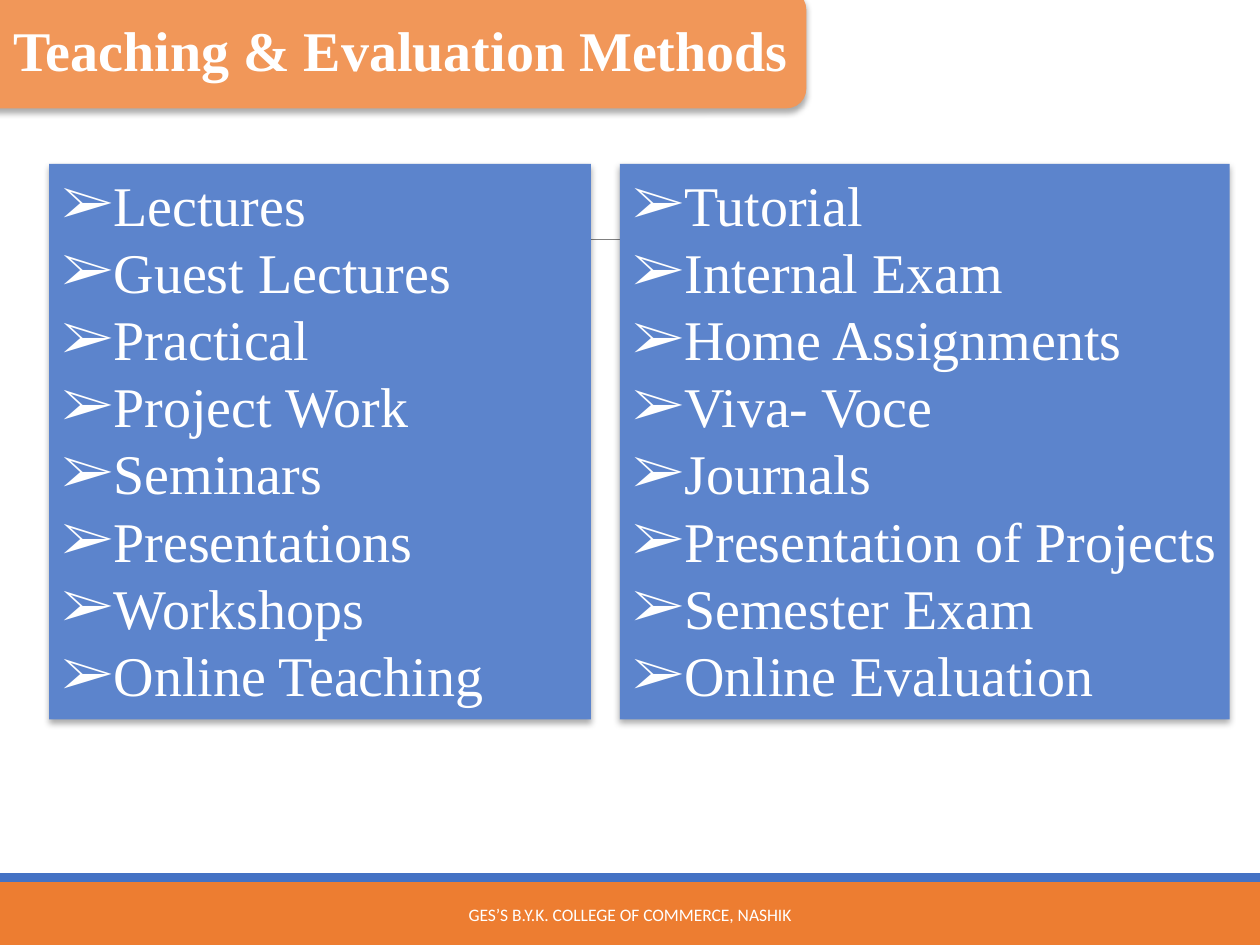
from lxml import etree
from pptx import Presentation
from pptx.dml.color import RGBColor
from pptx.enum import shapes, text
from pptx.oxml import parse_xml
from pptx.oxml.ns import nsdecls, qn
from pptx.util import Inches, Pt

ORANGE = RGBColor(0xED, 0x7D, 0x31)
LIGHT_ORANGE = RGBColor(0xF1, 0x97, 0x59)
BLUE = RGBColor(0x44, 0x72, 0xC4)
LIGHT_BLUE = RGBColor(0x5C, 0x84, 0xCC)
GREY = RGBColor(0x80, 0x80, 0x80)
WHITE = RGBColor(0xFF, 0xFF, 0xFF)

TEACHING = ["Lectures", "Guest Lectures", "Practical", "Project Work",
            "Seminars", "Presentations", "Workshops", "Online Teaching"]
EVALUATION = ["Tutorial", "Internal Exam", "Home Assignments", "Viva- Voce",
              "Journals", "Presentation of Projects", "Semester Exam",
              "Online Evaluation"]


def place(sp, left, top, width, height):
    """Move and size a shape, in inches."""
    sp.left, sp.top = Inches(left), Inches(top)
    sp.width, sp.height = Inches(width), Inches(height)


def send_to_back(s, sp):
    """Put a shape behind all others on the slide."""
    s.shapes._spTree.remove(sp._element)
    s.shapes._spTree.insert(2, sp._element)


def add_shadow(sp):
    """Give a shape a soft shadow straight below it."""
    sp._element.spPr.append(parse_xml(
        f'<a:effectLst {nsdecls("a")}>'
        '<a:outerShdw blurRad="44450" dist="27940" dir="5400000" rotWithShape="0">'
        '<a:srgbClr val="000000"><a:alpha val="32000"/></a:srgbClr>'
        '</a:outerShdw></a:effectLst>'))


def add_block(s, kind, box, color, shadow=False):
    """Add a filled shape without an outline."""
    sp = s.shapes.add_shape(kind, *map(Inches, box))
    sp.fill.solid()
    sp.fill.fore_color.rgb = color
    sp.line.fill.background()
    if shadow:
        add_shadow(sp)
    else:
        sp.shadow.inherit = False
    return sp


def add_rule(s, left, right, y):
    """Add a thin grey rule behind the panels."""
    line = s.shapes.add_connector(shapes.MSO_CONNECTOR.STRAIGHT, Inches(left),
                                  Inches(y), Inches(right), Inches(y))
    line.line.color.rgb = GREY
    line.line.width = Pt(0.5)
    etree.SubElement(line._element.spPr, qn("a:effectLst"))
    send_to_back(s, line)


def add_run(p, words, size, font, bold=False):
    """Add one white run to a paragraph."""
    r = p.add_run()
    r.text = words
    r.font.size = Pt(size)
    r.font.name = font
    r.font.bold = bold
    r.font.color.rgb = WHITE


def set_title(s, words):
    """Fill the title placeholder and set its rounded panel behind it."""
    box = (-0.63, -0.08, 7.03, 0.94)
    panel = add_block(s, shapes.MSO_SHAPE.ROUNDED_RECTANGLE, box,
                      LIGHT_ORANGE, shadow=True)
    send_to_back(s, panel)
    place(s.shapes.title, *box)
    tf = s.shapes.title.text_frame
    tf.auto_size = text.MSO_AUTO_SIZE.NONE
    tf.vertical_anchor = text.MSO_ANCHOR.MIDDLE
    tf.margin_right = Inches(0.14)
    p = tf.paragraphs[0]
    p.alignment = text.PP_ALIGN.RIGHT
    add_run(p, words, 32, "Times New Roman", bold=True)


def add_bullet(p):
    """Give a paragraph an arrowhead bullet with a hanging indent."""
    pPr = p._p.get_or_add_pPr()
    pPr.set("marL", str(Inches(0.37)))
    pPr.set("indent", str(-Inches(0.37)))
    etree.SubElement(pPr, qn("a:buFont"), typeface="Times New Roman")
    etree.SubElement(pPr, qn("a:buChar"), char="➢")


def fill_list(sp, left, width, items):
    """Turn a body placeholder into a blue panel of bulleted items."""
    place(sp, left, 1.3, width, 4.41)
    sp.fill.solid()
    sp.fill.fore_color.rgb = LIGHT_BLUE
    add_shadow(sp)
    tf = sp.text_frame
    tf.auto_size = text.MSO_AUTO_SIZE.NONE
    tf.vertical_anchor = text.MSO_ANCHOR.TOP
    for i, item in enumerate(items):
        p = tf.add_paragraph() if i else tf.paragraphs[0]
        add_bullet(p)
        p.space_before = Pt(0)
        p.line_spacing = Pt(38.4)
        add_run(p, item, 32, "Times New Roman")


def add_footer(s, words):
    """Add the two footer bars and the centred footer text."""
    rect = shapes.MSO_SHAPE.RECTANGLE
    add_block(s, rect, (0, 7, 10, 0.5), ORANGE)
    add_block(s, rect, (0, 6.93, 10, 0.07), BLUE)
    tf = s.shapes.add_textbox(*map(Inches, (3.02, 7.06, 3.96, 0.4))).text_frame
    tf.word_wrap = True
    tf.vertical_anchor = text.MSO_ANCHOR.MIDDLE
    p = tf.paragraphs[0]
    p.alignment = text.PP_ALIGN.CENTER
    add_run(p, words, 10, "Calibri")


def main():
    """Build the slide and save it."""
    prs = Presentation()
    prs.slide_width, prs.slide_height = Inches(10), Inches(7.5)
    s = prs.slides.add_slide(prs.slide_layouts[3])
    set_title(s, "Teaching & Evaluation Methods")
    fill_list(s.placeholders[1], 0.39, 4.3, TEACHING)
    fill_list(s.placeholders[2], 4.92, 4.84, EVALUATION)
    add_rule(s, 0.98, 9.15, 1.9)
    add_footer(s, "GES’S B.Y.K. COLLEGE OF COMMERCE, NASHIK")
    prs.save("out.pptx")


if __name__ == "__main__":
    main()
